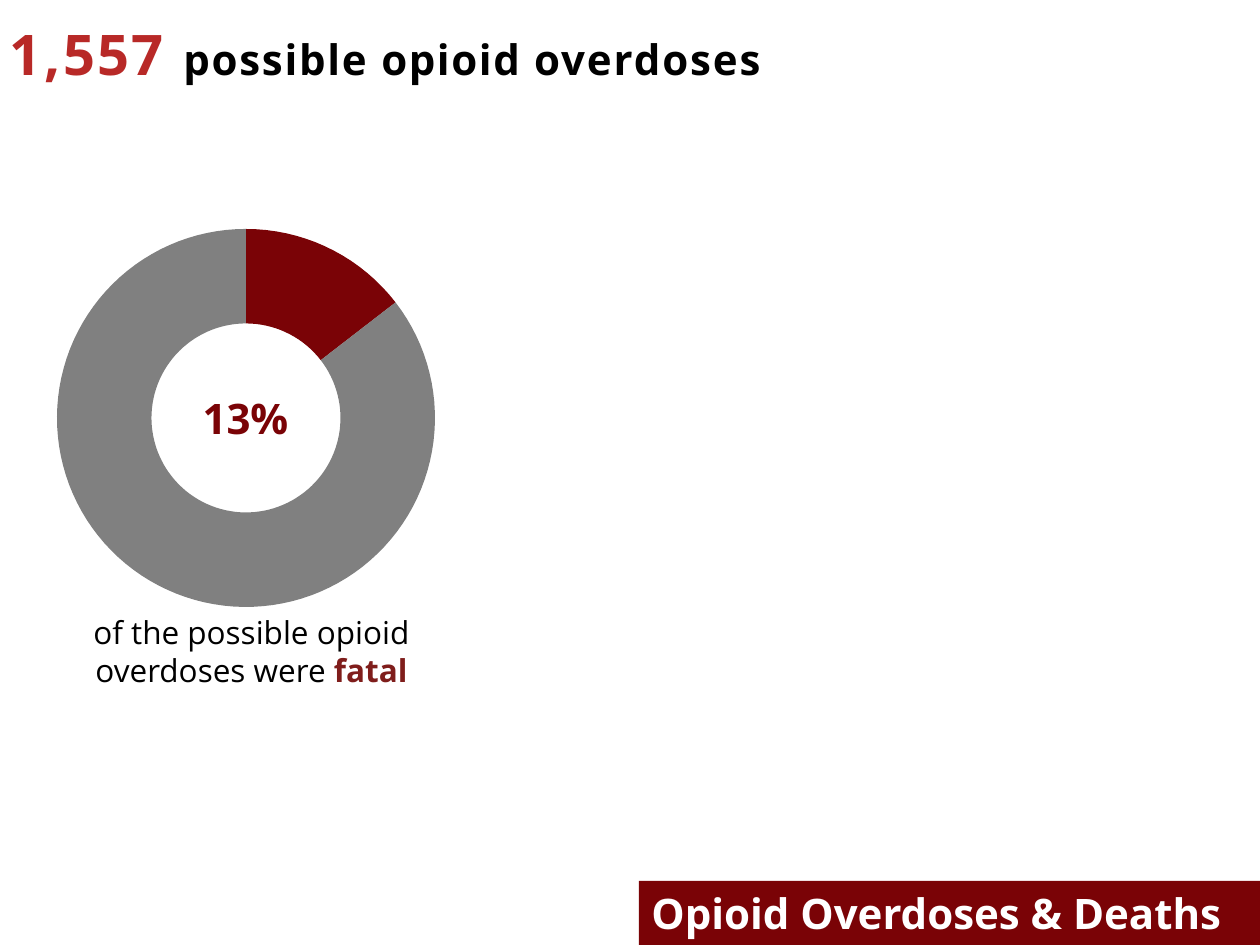
from math import cos, radians, sin

from pptx import Presentation
from pptx.dml.color import RGBColor
from pptx.enum.shapes import MSO_SHAPE
from pptx.enum.text import MSO_ANCHOR, MSO_AUTO_SIZE, PP_ALIGN
from pptx.util import Pt

RECTANGLE = MSO_SHAPE.RECTANGLE
TOP = MSO_ANCHOR.TOP
FIT_SHAPE = MSO_AUTO_SIZE.SHAPE_TO_FIT_TEXT
LEFT, CENTER = PP_ALIGN.LEFT, PP_ALIGN.CENTER

EMU_PER_PX = 914400 / 126
FONT = "Open Sans"
COLORS = {
    "maroon": "7A0306",
    "red": "B82927",
    "fatal": "7F1D1B",
    "grey": "808080",
    "black": "000000",
    "white": "FFFFFF",
}
FATAL_SWEEP = 52.3  # degrees drawn for the fatal share


def px(length):
    return round(length * EMU_PER_PX)


def color(name):
    return RGBColor.from_string(COLORS[name])


def paint(shape, fill):
    shape.shadow.inherit = False
    shape.fill.solid()
    shape.fill.fore_color.rgb = color(fill)
    shape.line.fill.background()


def write(shape, runs, align=LEFT):
    """Fill a shape with one paragraph of (text, size, colour, bold, spacing) runs."""
    frame = shape.text_frame
    frame.word_wrap = True
    frame.auto_size = FIT_SHAPE
    frame.vertical_anchor = TOP
    paragraph = frame.paragraphs[0]
    paragraph.alignment = align
    for text, size, ink, bold, spacing in runs:
        run = paragraph.add_run()
        run.text = text
        run.font.name = FONT
        run.font.size = Pt(size)
        run.font.bold = bold
        run.font.color.rgb = color(ink)
        if spacing:
            run._r.get_or_add_rPr().set("spc", str(spacing))
    return frame


def add_text(slide, box, runs, align=LEFT):
    return write(slide.shapes.add_textbox(*map(px, box)), runs, align)


def add_headline(slide, box):
    frame = add_text(slide, box, [
        ("1,557 ", 32, "red", True, 140),
        ("possible ", 24, "black", True, 100),
        ("opioid ", 24, "black", True, 90),
        ("overdoses", 24, "black", True, 110),
    ])
    frame.margin_left = frame.margin_right = 0
    frame.margin_top = frame.margin_bottom = 0
    frame.paragraphs[0]._p.get_or_add_pPr().set("marL", str(px(2)))


def add_ring_sector(slide, center, radii, start, end, fill):
    """Draw a ring sector; angles run clockwise in degrees from the top."""
    steps = round((end - start) / 3)
    angles = [radians(start + (end - start) * i / steps) for i in range(steps + 1)]

    def arc(radius, turn):
        return [(px(center[0] + radius * sin(a)), px(center[1] - radius * cos(a)))
                for a in turn]

    outer, inner = radii
    points = arc(outer, angles) + arc(inner, reversed(angles))
    builder = slide.shapes.build_freeform(*points[0])
    builder.add_line_segments(points[1:], close=True)
    paint(builder.convert_to_shape(), fill)


def add_fatal_donut(slide, box):
    left, top, size = box
    outer = size / 2
    center = (left + outer, top + outer)
    radii = (outer, outer / 2)

    # Ring: fatal share, then the rest
    add_ring_sector(slide, center, radii, 0, FATAL_SWEEP, "maroon")
    add_ring_sector(slide, center, radii, FATAL_SWEEP, 360, "grey")

    # Caption below and share in the hole
    add_text(slide, (left - 5, top + size, 399, 97), [
        ("of the possible opioid overdoses were ", 18, "black", False, 0),
        ("fatal", 18, "fatal", True, 0),
    ], CENTER)
    add_text(slide, (left + 103, top + 157, 171, 63),
             [("13%", 24, "maroon", True, 0)], CENTER)


def add_banner(slide, box):
    banner = slide.shapes.add_shape(RECTANGLE, *map(px, box))
    paint(banner, "maroon")
    write(banner, [("Opioid Overdoses & Deaths", 24, "white", True, 0)])


def main():
    deck = Presentation()
    deck.slide_width, deck.slide_height = px(1260), px(945)
    slide = deck.slides.add_slide(deck.slide_layouts[6])
    add_banner(slide, (639, 881, 621, 64))
    add_headline(slide, (8, 19, 1254, 68))
    add_fatal_donut(slide, (57, 229, 378))
    deck.save("out.pptx")


if __name__ == "__main__":
    main()
